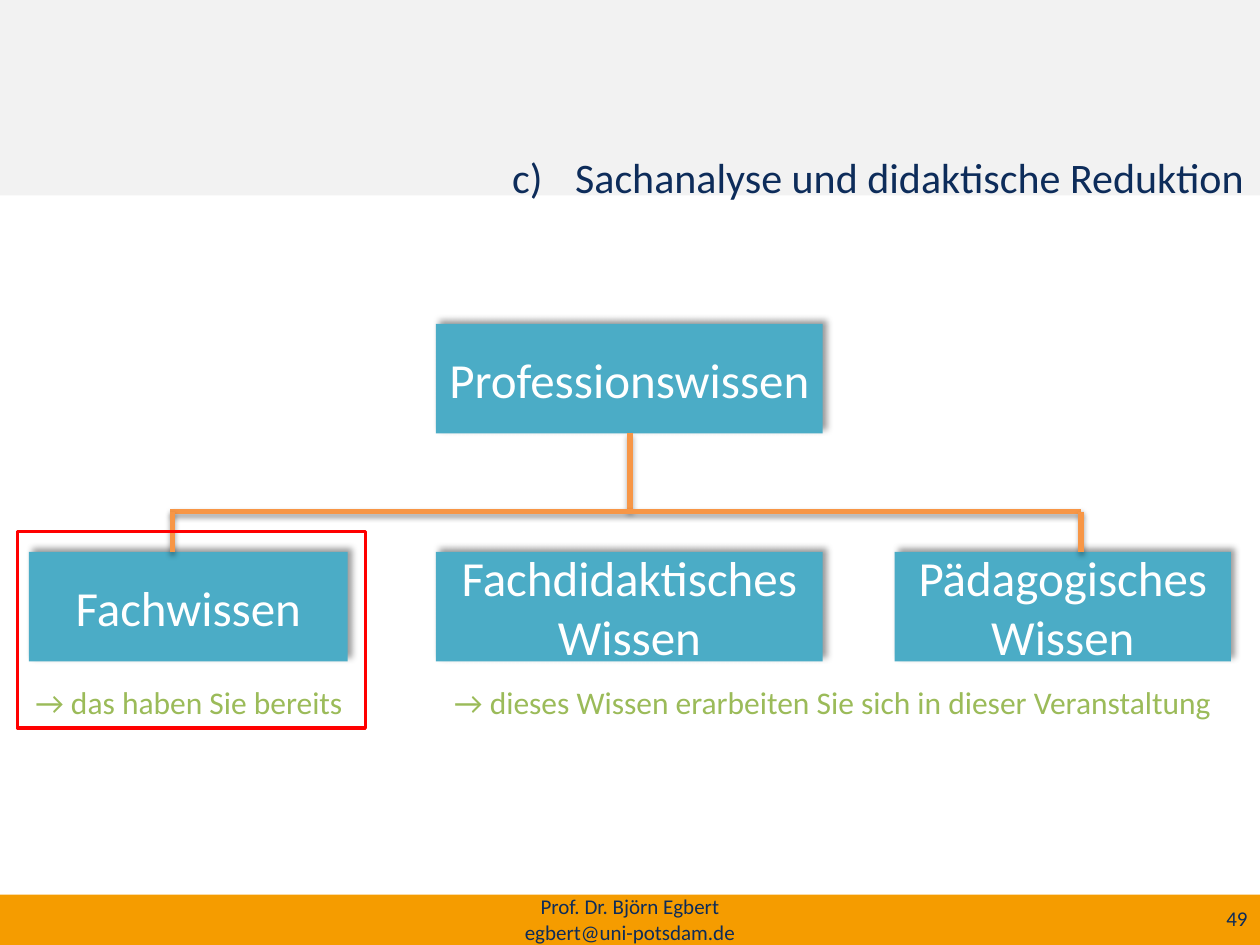
"""Builds a slide on the three branches of professional knowledge."""
from dataclasses import dataclass
from typing import Optional

import pptx
import pptx.dml.color
import pptx.enum.shapes
import pptx.enum.text
import pptx.oxml
import pptx.oxml.ns
import pptx.slide
import pptx.util

ALIGN = pptx.enum.text.PP_ALIGN
ANCHOR = pptx.enum.text.MSO_ANCHOR
WIDE, HIGH = pptx.util.Inches(10), pptx.util.Inches(7.5)
COLS, ROWS = 100, 75


@dataclass(frozen=True)
class Theme:
    font: str = "Calibri"
    navy: str = "0D2C5A"
    band: str = "F2F2F2"
    foot: str = "F59C00"
    teal: str = "4BACC6"
    line: str = "F79646"
    note: str = "9BBB59"
    mark: str = "FF0000"
    white: str = "FFFFFF"
    small: int = 12
    body: int = 18
    title: int = 24
    node: int = 28


@dataclass(frozen=True)
class Area:
    col: float
    row: float
    cols: float
    rows: float

    def place(self) -> tuple[int, int, int, int]:
        return (across(self.col), down(self.row),
                across(self.cols), down(self.rows))


@dataclass(frozen=True)
class Shade:
    alpha: int
    blur: float
    dist: float
    turn: int


@dataclass(frozen=True)
class Label:
    text: str
    area: Area
    size: int
    color: str
    align: ALIGN = ALIGN.CENTER
    anchor: ANCHOR = ANCHOR.MIDDLE
    start: Optional[int] = None


@dataclass(frozen=True)
class Node:
    text: str
    area: Area


@dataclass(frozen=True)
class Link:
    col: float
    row: float
    to_col: float
    to_row: float


THEME = Theme()
CAST = Shade(40, 4, 3, 315)
DROP = Shade(35, 3.1, 1.8, 90)
TOP, LOW, TALL = 25.7, 43.8, 8.7
BAR, LEFT, MID, RIGHT = 40.6, 13.7, 50, 85.8
NOTE = 53.7

NODES = [
    Node("Professionswissen", Area(34.6, TOP, 30.7, TALL)),
    Node("Pädagogisches Wissen", Area(71, LOW, 26.7, TALL)),
    Node("Fachdidaktisches Wissen", Area(34.6, LOW, 30.7, TALL)),
    Node("Fachwissen", Area(2.3, LOW, 25.3, TALL)),
]
LINKS = [
    Link(MID, TOP + TALL, MID, BAR),
    Link(LEFT - 0.2, BAR, RIGHT, BAR),
    Link(LEFT, BAR, LEFT, LOW),
    Link(RIGHT, BAR, RIGHT, LOW),
]
FOOT = [
    Label("49", Area(76, 70.9, 24, 4), THEME.small, THEME.navy, ALIGN.RIGHT),
    Label("Prof. Dr. Björn Egbert\vegbert@uni-potsdam.de",
          Area(33.1, 70.9, 33.8, 4.1), THEME.small, THEME.navy),
]
TEXTS = [
    Label("Sachanalyse und didaktische Reduktion", Area(13.5, 11.5, 86.2, 8.7),
          THEME.title, THEME.navy, ALIGN.RIGHT, ANCHOR.TOP, 3),
    Label("→ das haben Sie bereits", Area(1.4, NOTE, 27.2, 4),
          THEME.body, THEME.note),
    Label("→ dieses Wissen erarbeiten Sie sich in dieser Veranstaltung",
          Area(34.6, NOTE, 63, 4), THEME.body, THEME.note),
]


def across(cols: float) -> int:
    return round(WIDE * cols / COLS)


def down(rows: float) -> int:
    return round(HIGH * rows / ROWS)


def rgb(color: str) -> pptx.dml.color.RGBColor:
    return pptx.dml.color.RGBColor.from_string(color)


def cast(item, shade: Shade) -> None:
    space = pptx.oxml.ns.nsdecls("a")
    item.append(pptx.oxml.parse_xml(
        f'<a:effectLst {space}><a:outerShdw blurRad="{pptx.util.Pt(shade.blur)}" '
        f'dist="{pptx.util.Pt(shade.dist)}" dir="{shade.turn * 60000}" '
        f'rotWithShape="0"><a:srgbClr val="000000">'
        f'<a:alpha val="{shade.alpha * 1000}"/></a:srgbClr>'
        f'</a:outerShdw></a:effectLst>'))


def number(para, start: int) -> None:
    props = para._p.get_or_add_pPr()
    inset = pptx.util.Inches(0.5)
    props.set("marL", str(inset))
    props.set("indent", str(-inset))
    space = pptx.oxml.ns.nsdecls("a")
    props.append(pptx.oxml.parse_xml(
        f'<a:buAutoNum {space} type="alphaLcParenR" startAt="{start}"/>'))


def write(frame, label: Label) -> None:
    frame.word_wrap = True
    frame.vertical_anchor = label.anchor
    para = frame.paragraphs[0]
    para.text = label.text
    para.alignment = label.align
    if label.start:
        number(para, label.start)
    para.font.name = THEME.font
    para.font.size = pptx.util.Pt(label.size)
    para.font.color.rgb = rgb(label.color)


def draw_text(slide: pptx.slide.Slide, label: Label) -> None:
    write(slide.shapes.add_textbox(*label.area.place()).text_frame, label)


def draw_rect(slide: pptx.slide.Slide, area: Area, fill: Optional[str] = None,
              edge: Optional[str] = None, shade: Optional[Shade] = None):
    kind = pptx.enum.shapes.MSO_SHAPE.RECTANGLE
    shape = slide.shapes.add_shape(kind, *area.place())
    if fill:
        shape.fill.solid()
        shape.fill.fore_color.rgb = rgb(fill)
    else:
        shape.fill.background()
    if edge:
        shape.line.color.rgb = rgb(edge)
        shape.line.width = pptx.util.Pt(2)
    else:
        shape.line.fill.background()
    if shade:
        cast(shape._element.spPr, shade)
    else:
        shape.shadow.inherit = False
    return shape


def draw_node(slide: pptx.slide.Slide, node: Node) -> None:
    frame = draw_rect(slide, node.area, THEME.teal, shade=CAST).text_frame
    frame.margin_left = frame.margin_right = pptx.util.Inches(0.05)
    write(frame, Label(node.text, node.area, THEME.node, THEME.white))


def draw_link(slide: pptx.slide.Slide, link: Link) -> None:
    kind = pptx.enum.shapes.MSO_CONNECTOR.STRAIGHT
    line = slide.shapes.add_connector(
        kind, across(link.col), down(link.row),
        across(link.to_col), down(link.to_row))
    line.line.color.rgb = rgb(THEME.line)
    line.line.width = pptx.util.Pt(3)
    cast(line._element.spPr, DROP)


def main() -> None:
    deck = pptx.Presentation()
    deck.slide_width, deck.slide_height = WIDE, HIGH
    slide = deck.slides.add_slide(deck.slide_layouts[6])
    draw_rect(slide, Area(0, 0, COLS, 15.5), THEME.band)
    draw_rect(slide, Area(0, 71, COLS, 4), THEME.foot)
    for label in FOOT:
        draw_text(slide, label)
    for node in NODES:
        draw_node(slide, node)
    for link in LINKS:
        draw_link(slide, link)
    for label in TEXTS:
        draw_text(slide, label)
    draw_rect(slide, Area(1.4, 42.2, 27.6, 15.6), edge=THEME.mark)
    deck.save("out.pptx")


if __name__ == "__main__":
    main()
